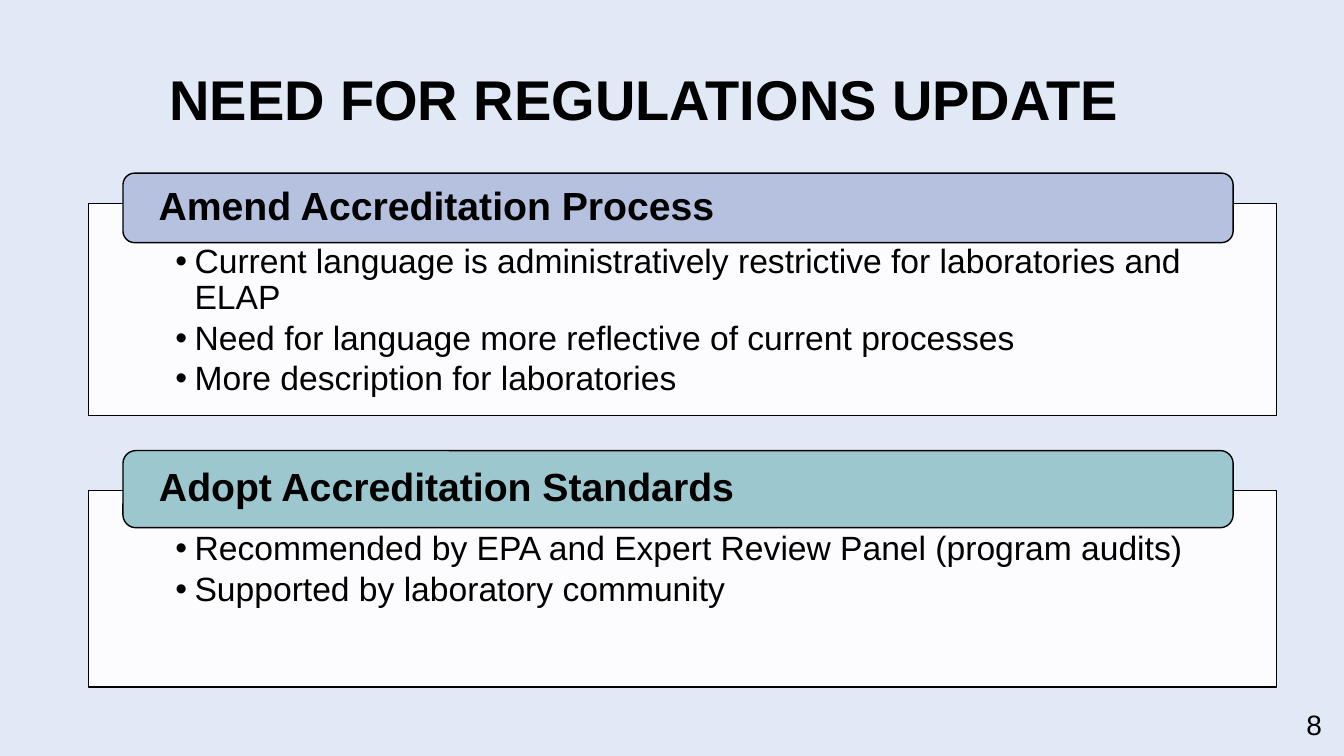
from pptx import Presentation
from pptx.dml.color import RGBColor as RGB
from pptx.enum.shapes import MSO_SHAPE as SHAPE
from pptx.enum.text import MSO_ANCHOR as ANCHOR, MSO_AUTO_SIZE as FIT, PP_ALIGN as ALIGN
from pptx.util import Inches, Pt
from lxml.etree import SubElement
from pptx.oxml.ns import qn

HUE = {"back": "E2E9F6", "ink": "000000", "box": "FFFFFF",
       "amend": "B5C1DF", "adopt": "9CC7CE"}

deck = Presentation()
deck.slide_width, deck.slide_height = Inches(13.33), Inches(7.5)
# One column and one row are a hundredth of the slide
COL, ROW = deck.slide_width / 100, deck.slide_height / 100


def write(shape, *lines, size, bold=False, align=ALIGN.LEFT, anchor=ANCHOR.MIDDLE,
          pad=(0.1, 0.05, 0.1, 0.05), lead=0.9, after=0, hang=0):
    frame = shape.text_frame
    frame.word_wrap, frame.auto_size = True, FIT.NONE
    frame.vertical_anchor = anchor
    (frame.margin_left, frame.margin_top,
     frame.margin_right, frame.margin_bottom) = map(Inches, pad)
    frame.text = "\n".join(lines)
    for para in frame.paragraphs:
        para.alignment, para.line_spacing = align, lead
        para.space_before, para.space_after = Pt(0), Pt(after)
        font = para.runs[0].font
        font.name, font.size, font.bold = "Arial", Pt(size), bold
        font.color.rgb = RGB.from_string(HUE["ink"])
        if hang:
            props = para._p.get_or_add_pPr()
            props.set("marL", str(Inches(hang)))
            props.set("indent", str(-Inches(hang)))
            SubElement(props, qn("a:buFont"), typeface="Arial")
            SubElement(props, qn("a:buChar"), char="•")


def place(shape, x, y, w, h, fill=None):
    shape.left, shape.top = int(x * COL), int(y * ROW)
    shape.width, shape.height = int(w * COL), int(h * ROW)
    if fill:
        shape.fill.solid()
        shape.fill.fore_color.rgb = RGB.from_string(HUE[fill])
        shape.line.color.rgb = RGB.from_string(HUE["ink"])
        shape.line.width = Pt(1)


# Slide and title
slide = deck.slides.add_slide(deck.slide_layouts[3])
slide.background.fill.solid()
slide.background.fill.fore_color.rgb = RGB.from_string(HUE["back"])
title, *lists = slide.placeholders
place(title, 11.85, 3, 86, 21.2)
write(title, "NEED FOR REGULATIONS UPDATE", size=40, bold=True)

# Topics: name, bar colour, bar top and height, box top and height, points
topics = [
    ("Amend Accreditation Process", "amend", 22.9, 9.2, 26.9, 28.1,
     ["Current language is administratively restrictive for laboratories and ELAP",
      "Need for language more reflective of current processes",
      "More description for laboratories"]),
    ("Adopt Accreditation Standards", "adopt", 59.6, 10.2, 64.9, 26,
     ["Recommended by EPA and Expert Review Panel (program audits)",
      "Supported by laboratory community"]),
]
for box, (name, hue, top, high, y, h, points) in zip(lists, topics):
    # White box with the list
    place(box, 6.6, y, 88.37, h, fill="box")
    shade = box.fill._xPr.find(qn("a:solidFill"))[0]
    SubElement(shade, qn("a:alpha"), val="90000")
    write(box, *points, size=24, anchor=ANCHOR.TOP,
          pad=(0.86, 0.41, 0.86, 0.14), after=3, hang=0.19)
    # Rounded bar with the heading
    bar = slide.shapes.add_shape(SHAPE.ROUNDED_RECTANGLE, 0, 0, 0, 0)
    bar.shadow.inherit = False
    place(bar, 9.15, top, 82.6, high, fill=hue)
    write(bar, name, size=28, bold=True, pad=(0.32, 0.03, 0.32, 0.03))

# Page number
page = slide.shapes.add_textbox(0, 0, 0, 0)
place(page, 95, 92, 4.1, 7.5)
write(page, "8", size=20, align=ALIGN.RIGHT, lead=1)

deck.save("out.pptx")
